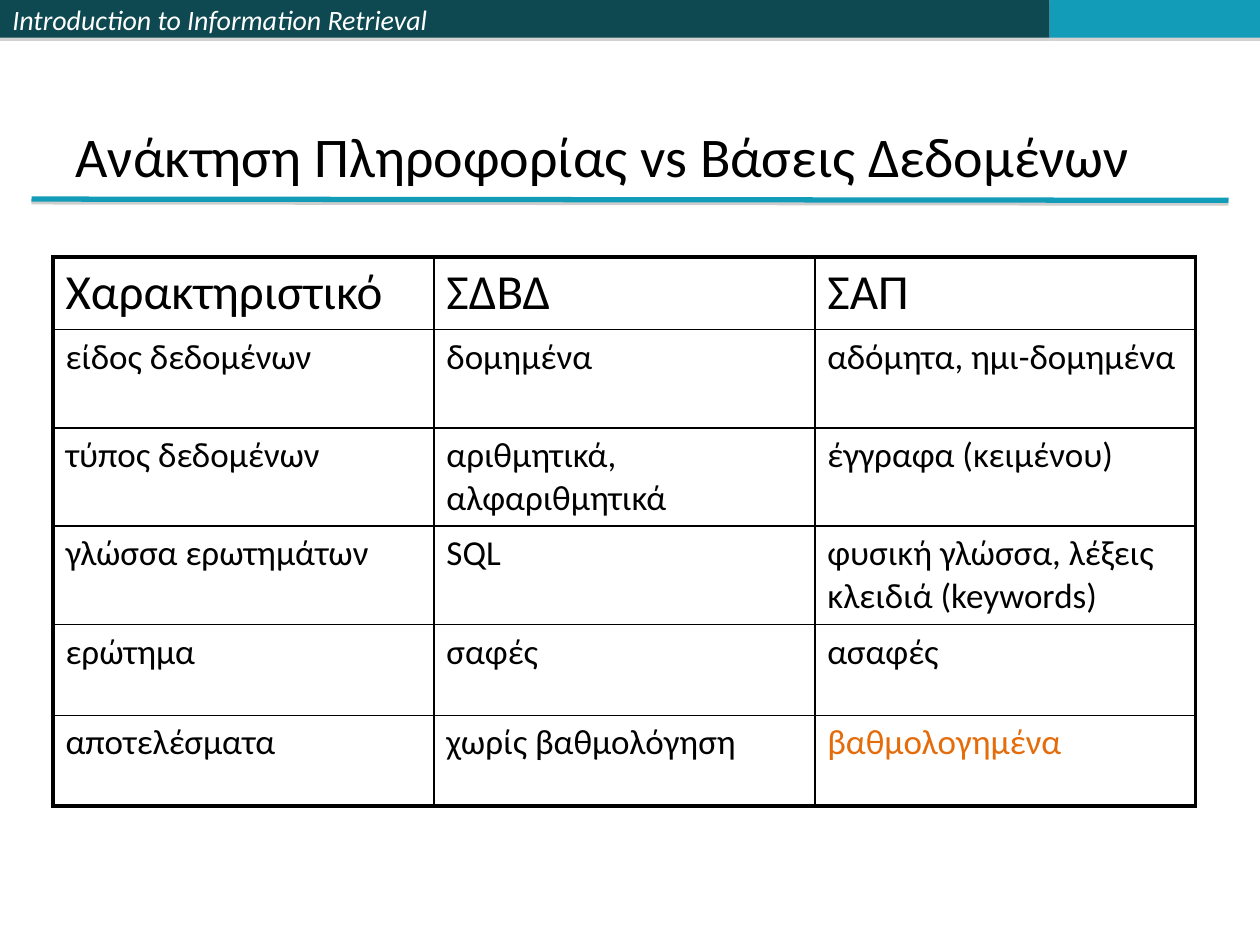
import pptx
import pptx.util
import pptx.dml.color
import pptx.enum.shapes
import pptx.enum.text
import pptx.oxml
import pptx.oxml.ns
from lxml import etree

Inches, Pt = pptx.util.Inches, pptx.util.Pt
ANCHOR = pptx.enum.text.MSO_ANCHOR
FONT = "Calibri"
COLORS = {"dark": "0E4851", "teal": "139CB7", "white": "FFFFFF",
          "black": "000000", "orange": "E46C0A", "shadow": "808080"}
ROWS = [
    ["Χαρακτηριστικό", "ΣΔΒΔ", "ΣΑΠ"],
    ["είδος δεδομένων", "δομημένα", "αδόμητα, ημι-δομημένα"],
    ["τύπος δεδομένων", "αριθμητικά, αλφαριθμητικά", "έγγραφα (κειμένου)"],
    ["γλώσσα ερωτημάτων", "SQL", "φυσική γλώσσα, λέξεις κλειδιά (keywords)"],
    ["ερώτημα", "σαφές", "ασαφές"],
    ["αποτελέσματα", "χωρίς βαθμολόγηση", "βαθμολογημένα"],
]
ROW_HEIGHTS = [0.57, 0.78, 0.78, 0.78, 0.72, 0.72]


def rgb(name):
    return pptx.dml.color.RGBColor.from_string(COLORS[name])


def add_run(p, text, size, color="black", italic=False):
    r = p.add_run()
    r.text = text
    r.font.name, r.font.size, r.font.italic = FONT, Pt(size), italic
    r.font.color.rgb = rgb(color)


def drop_shadow(sp, distance, opacity):
    """Give a shape or connector a sharp shadow straight below it."""
    sp_pr = sp._element.spPr
    for old in sp_pr.findall(pptx.oxml.ns.qn("a:effectLst")):
        sp_pr.remove(old)
    sp_pr.append(pptx.oxml.parse_xml(
        f'<a:effectLst {pptx.oxml.ns.nsdecls("a")}>'
        f'<a:outerShdw blurRad="0" dist="{Pt(distance)}" dir="5400000" rotWithShape="0">'
        f'<a:srgbClr val="{COLORS["shadow"]}"><a:alpha val="{opacity * 1000}"/></a:srgbClr>'
        '</a:outerShdw></a:effectLst>'))


def add_header(s, left, top, height):
    bars = [(4.08, "dark", "Introduction to Information Retrieval"),
            (4.25, "dark", ""), (1.67, "teal", "")]
    for width, color, text in bars:
        sp = s.shapes.add_shape(pptx.enum.shapes.MSO_SHAPE.RECTANGLE, Inches(left),
                                Inches(top), Inches(width), Inches(height))
        sp.fill.solid()
        sp.fill.fore_color.rgb = rgb(color)
        sp.line.fill.background()
        drop_shadow(sp, 1.8, 35)
        if text:
            tf = sp.text_frame
            tf.vertical_anchor = ANCHOR.MIDDLE
            p = tf.paragraphs[0]
            p.alignment = pptx.enum.text.PP_ALIGN.LEFT
            add_run(p, text, 16, "white", italic=True)
        left += width


def add_title(s, left, top, width, height):
    """Place the title and the rule under it."""
    rule = s.shapes.add_connector(
        pptx.enum.shapes.MSO_CONNECTOR.STRAIGHT, Inches(left - 0.25),
        Inches(top + height + 0.03), Inches(left + width + 0.25), Inches(top + height + 0.04))
    rule.line.color.rgb = rgb("teal")
    rule.line.width = Pt(3)
    drop_shadow(rule, 1.6, 38)

    title = s.shapes.title
    title.left, title.top = Inches(left), Inches(top)
    title.width, title.height = Inches(width), Inches(height)
    tf = title.text_frame
    tf.auto_size = pptx.enum.text.MSO_AUTO_SIZE.NONE
    tf.vertical_anchor = ANCHOR.BOTTOM
    p = tf.paragraphs[0]
    p.alignment = pptx.enum.text.PP_ALIGN.LEFT
    add_run(p, "Ανάκτηση Πληροφορίας vs Βάσεις Δεδομένων", 32)


def set_borders(cell, widths):
    tc_pr = cell._tc.get_or_add_tcPr()
    for i, (side, width) in enumerate(widths.items()):
        tc_pr.insert(i, pptx.oxml.parse_xml(
            f'<a:{side} {pptx.oxml.ns.nsdecls("a")} w="{Pt(width)}"><a:solidFill>'
            f'<a:srgbClr val="{COLORS["black"]}"/></a:solidFill></a:{side}>'))


def add_comparison(s, left, top, width):
    n_rows, n_cols = len(ROWS), len(ROWS[0])
    table = s.shapes.add_table(n_rows, n_cols, Inches(left), Inches(top),
                               Inches(width), Inches(sum(ROW_HEIGHTS))).table
    table.first_row = table.horz_banding = False
    for col in table.columns:
        col.width = Inches(width / n_cols)
    for i, texts in enumerate(ROWS):
        table.rows[i].height = Inches(ROW_HEIGHTS[i])
        for j, text in enumerate(texts):
            cell = table.cell(i, j)
            cell.fill.background()
            last = i == n_rows - 1 and j == n_cols - 1
            p = cell.text_frame.paragraphs[0]
            etree.SubElement(
                etree.SubElement(p._p.get_or_add_pPr(), pptx.oxml.ns.qn("a:spcBef")),
                pptx.oxml.ns.qn("a:spcPct"), val="20000")
            add_run(p, text, 28 if i == 0 else 20, "orange" if last else "black")
            outer = {"lnL": j == 0, "lnR": j == n_cols - 1,
                     "lnT": i == 0, "lnB": i == n_rows - 1}
            set_borders(cell, {side: 2.25 if edge else 1 for side, edge in outer.items()})


def main():
    prs = pptx.Presentation()
    prs.slide_width, prs.slide_height = Inches(10), Inches(7.5)
    s = prs.slides.add_slide(prs.slide_layouts[5])
    add_header(s, 0, 0, 0.3)
    add_title(s, 0.5, 0.3, 9, 1.25)
    add_comparison(s, 0.42, 2.04, 9.07)
    prs.save("out.pptx")


if __name__ == "__main__":
    main()
